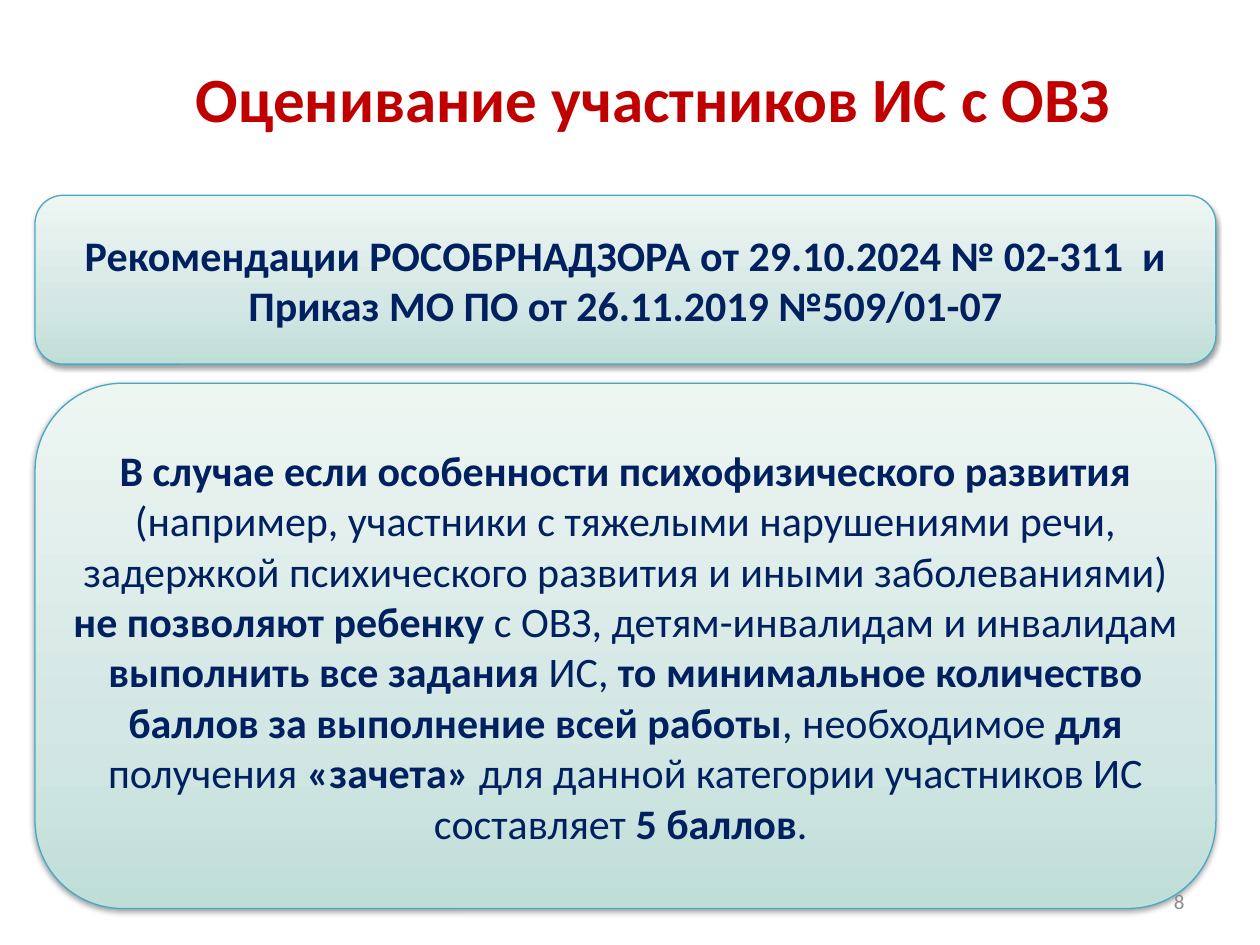
from copy import deepcopy

from lxml import etree
from pptx import Presentation
from pptx.dml.color import RGBColor
from pptx.enum import shapes, text
from pptx.oxml import ns
from pptx.util import Pt

COLORS = {
    "title": "C00000",
    "body": "002060",
    "number": "8C8C8C",
    "outline": "46AAC5",
    "shadow": "000000",
}
PANEL_STOPS = [(0, "C0DED8"), (0.35, "D3E7E4"), (1, "EEF6F2")]
FONT = "Calibri"

SOURCES = [("Рекомендации РОСОБРНАДЗОРА от 29.10.2024 № 02-311  и "
            "Приказ МО ПО от 26.11.2019 №509/01-07", True)]
RULE = [
    ("В случае если особенности психофизического развития ", True),
    ("(например, участники с тяжелыми нарушениями речи, задержкой "
     "психического развития и иными заболеваниями) ", False),
    ("не позволяют ребенку ", True),
    ("с ОВЗ, детям-инвалидам и инвалидам ", False),
    ("выполнить все задания ", True),
    ("ИС, ", False),
    ("то минимальное количество баллов за выполнение всей работы", True),
    (", необходимое ", False),
    ("для", True),
    (" получения ", False),
    ("«зачета»", True),
    (" для данной категории участников ИС составляет ", False),
    ("5 баллов", True),
    (". ", False),
]


def write_text(shape, runs, size, color, alignment):
    frame = shape.text_frame
    frame.word_wrap = True
    frame.vertical_anchor = text.MSO_ANCHOR.MIDDLE
    paragraph = frame.paragraphs[0]
    paragraph.alignment = alignment
    paragraph.font.name = FONT
    paragraph.font.size = Pt(size)
    paragraph.font.color.rgb = RGBColor.from_string(color)
    for words, bold in runs:
        run = paragraph.add_run()
        run.text = words
        run.font.bold = bold


def add_label(slide, box, words, size, color, alignment, bold=False):
    label = slide.shapes.add_textbox(*map(Pt, box))
    write_text(label, [(words, bold)], size, color, alignment)


def fill_gradient(shape):
    shape.fill.gradient()
    shape.fill.gradient_angle = 90
    first = shape._element.spPr.find(".//" + ns.qn("a:gs"))
    first.addnext(deepcopy(first))
    for stop, (position, color) in zip(shape.fill.gradient_stops, PANEL_STOPS):
        stop.position = position
        stop.color.rgb = RGBColor.from_string(color)


def add_shadow(shape):
    shape.shadow.inherit = False
    effects = shape._element.spPr.find(ns.qn("a:effectLst"))
    shadow = etree.SubElement(
        effects, ns.qn("a:outerShdw"), blurRad=str(Pt(3.1)),
        dist=str(Pt(1.6)), dir="5400000", rotWithShape="0")
    color = etree.SubElement(shadow, ns.qn("a:srgbClr"), val=COLORS["shadow"])
    etree.SubElement(color, ns.qn("a:alpha"), val="38000")


def add_panel(slide, box, runs):
    panel = slide.shapes.add_shape(
        shapes.MSO_SHAPE.ROUNDED_RECTANGLE, *map(Pt, box))
    fill_gradient(panel)
    panel.line.color.rgb = RGBColor.from_string(COLORS["outline"])
    panel.line.width = Pt(0.75)
    add_shadow(panel)
    write_text(panel, runs, 24, COLORS["body"], text.PP_ALIGN.CENTER)


def main():
    presentation = Presentation()
    presentation.slide_width = Pt(720)
    presentation.slide_height = Pt(540)
    slide = presentation.slides.add_slide(presentation.slide_layouts[6])
    add_label(slide, (76.3, 28.8, 594, 53.3), "Оценивание участников ИС с ОВЗ",
              36, COLORS["title"], text.PP_ALIGN.CENTER, bold=True)
    add_panel(slide, (20, 111.6, 674.8, 96.5), SOURCES)
    add_panel(slide, (20, 219, 674.8, 300.2), RULE)
    add_label(slide, (516, 500.5, 168, 28.75), "8",
              12, COLORS["number"], text.PP_ALIGN.RIGHT)
    presentation.save("out.pptx")


if __name__ == "__main__":
    main()
